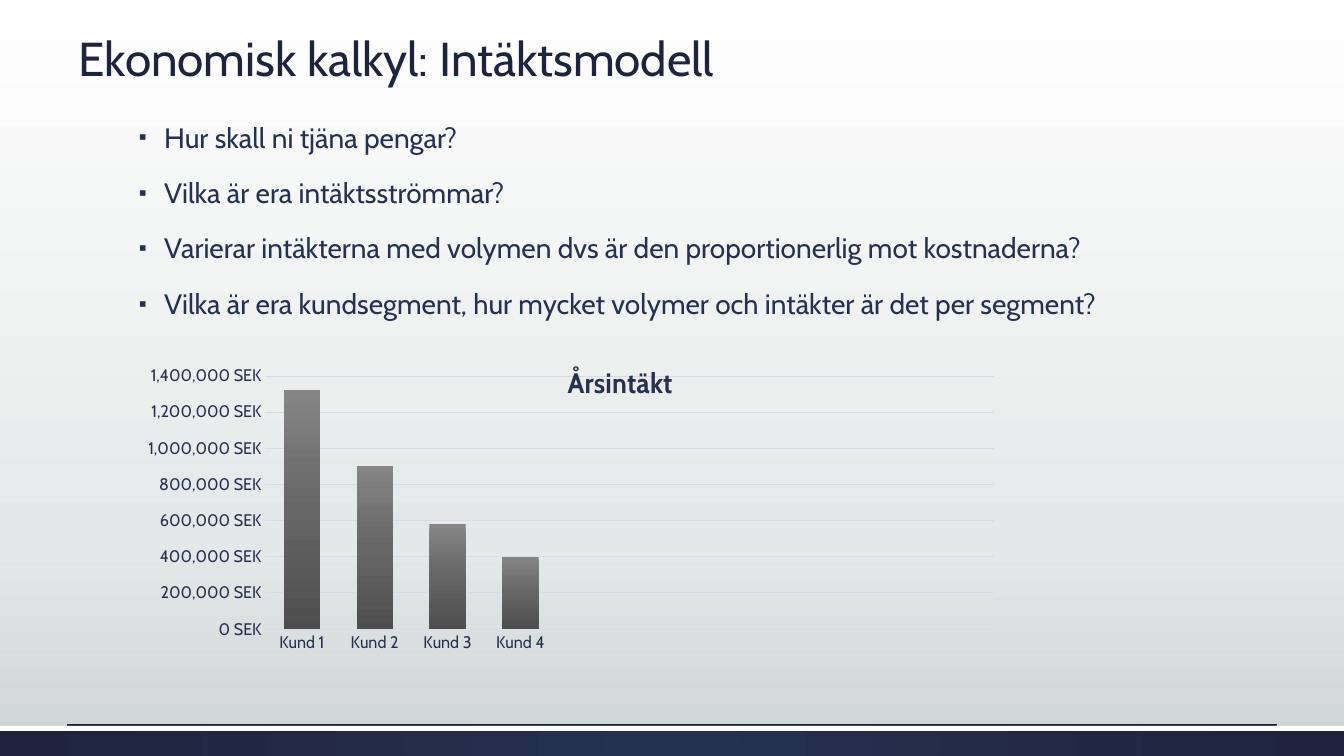
"""Build the revenue model slide with its questions and yearly revenue chart."""
from lxml import etree
from pptx import Presentation
from pptx import util as u
from pptx.chart.data import CategoryChartData
from pptx.dml.color import RGBColor
from pptx.enum import chart as ch, shapes as sh, text as tx
from pptx.oxml.ns import qn

TITLE = "Ekonomisk kalkyl: Intäktsmodell"
ASKS = [
    "Hur skall ni tjäna pengar?",
    "Vilka är era intäktsströmmar?",
    "Varierar intäkterna med volymen dvs är den proportionerlig mot kostnaderna?",
    "Vilka är era kundsegment, hur mycket volymer och intäkter är det per segment?",
]
HEAD = "Årsintäkt"
SALES = {"Kund 1": 1320000, "Kund 2": 900000, "Kund 3": 580000, "Kund 4": 400000}
SLOTS = 10
HUES = {"ink": "263050", "dark": "1D243C", "grid": "D7DCEC", "white": "FFFFFF"}
FACE = "Cabin"
BACK = [(0, "FFFFFF"), (72, "E5E8E8"), (100, "CDD2D2")]
BAND = [(0, HUES["ink"]), (100, HUES["dark"])]
BARS = [(0, "858585"), (50, "666666"), (100, "4E4E4E")]
WIDE, HIGH = 13.33, 7.5
FOOT = 0.96 * HIGH
EDGE = WIDE / 20
PLOT = {"layoutTarget": "inner", "xMode": "edge", "yMode": "edge",
        "x": 0.103, "y": 0.092, "w": 0.882, "h": 0.795}
SPOT = {"xMode": "edge", "yMode": "edge", "x": 0.463, "y": 0.035}


def put(obj, **vals):
    for key, val in vals.items():
        setattr(obj, key, val)


def hue(name):
    return RGBColor.from_string(HUES[name])


def sub(node, tag, **vals):
    return etree.SubElement(node, qn(tag), {k: str(v) for k, v in vals.items()})


def style(font, size, name="ink", bold=False):
    put(font, name=FACE, size=u.Pt(size), bold=bold)
    font.color.rgb = hue(name)


def grade(fill, root, stops, round_=False):
    fill.gradient()
    node = next(root.iter(qn("a:gradFill")))
    for kid in list(node):
        node.remove(kid)
    rows = sub(node, "a:gsLst")
    for pos, tone in stops:
        sub(sub(rows, "a:gs", pos=pos * 1000), "a:srgbClr", val=tone)
    if round_:
        way = sub(node, "a:path", path="circle")
        sub(way, "a:fillToRect", **dict.fromkeys("ltrb", 50000))
    else:
        sub(node, "a:lin", ang=5400000, scaled=0)


def place(node, spot, rank):
    for old in node.findall(qn("c:layout")):
        node.remove(old)
    lay = etree.Element(qn("c:layout"))
    man = sub(lay, "c:manualLayout")
    for key, val in spot.items():
        sub(man, "c:" + key, val=val)
    node.insert(rank, lay)


def band(slide, top, high):
    box = slide.shapes.add_shape(sh.MSO_SHAPE.RECTANGLE, 0, u.Inches(top),
                                 u.Inches(WIDE), u.Inches(high))
    box.shadow.inherit = False
    box.line.fill.background()
    return box


def write(slide, area, lines, size, name, anchor):
    frame = slide.shapes.add_textbox(*map(u.Inches, area)).text_frame
    put(frame, word_wrap=True, vertical_anchor=anchor, text="\n".join(lines))
    for par in frame.paragraphs:
        par.line_spacing = 0.9
        style(par.runs[0].font, size, name)
    return frame.paragraphs


def dot(par):
    par.space_before = u.Pt(18)
    props = par.runs[0].font and par._p.get_or_add_pPr()
    put_in = {"marL": u.Inches(0.3), "indent": u.Inches(-0.25)}
    for key, val in put_in.items():
        props.set(key, str(val))
    sub(sub(props, "a:buClr"), "a:srgbClr", val=HUES["ink"])
    sub(props, "a:buSzPct", val=80000)
    sub(props, "a:buFont", typeface="Arial")
    sub(props, "a:buChar", char="▪")


def graph(slide, area):
    data = CategoryChartData()
    gap = SLOTS - len(SALES)
    data.categories = [*SALES, *[""] * gap]
    data.add_series(HEAD, [*SALES.values(), *[None] * gap])
    chart = slide.shapes.add_chart(ch.XL_CHART_TYPE.COLUMN_CLUSTERED,
                                   *map(u.Inches, area), data).chart
    put(chart, has_legend=False, has_title=True)
    style(chart.font, 12)
    frame = chart.chart_title.text_frame
    frame.text = HEAD
    style(frame.paragraphs[0].runs[0].font, 20, bold=True)
    plot = chart.plots[0]
    put(plot, gap_width=100, overlap=-24, vary_by_categories=False)
    grade(plot.series[0].format.fill, chart.element, BARS)
    cat, val = chart.category_axis, chart.value_axis
    for axis in (cat, val):
        put(axis, major_tick_mark=ch.XL_TICK_MARK.NONE,
            minor_tick_mark=ch.XL_TICK_MARK.NONE)
        style(axis.tick_labels.font, 12)
    put(val, minimum_scale=0, maximum_scale=1400000, major_unit=200000,
        has_major_gridlines=True)
    put(val.tick_labels, number_format="#,##0\\ [$SEK]",
        number_format_is_linked=False)
    val.format.line.fill.background()
    for line in (cat.format.line, val.major_gridlines.format.line):
        line.color.rgb = hue("grid")
        line.width = u.Pt(0.75)
    place(next(chart.element.iter(qn("c:plotArea"))), PLOT, 0)
    place(next(chart.element.iter(qn("c:title"))), SPOT, 1)


def main():
    deck = Presentation()
    put(deck, slide_width=u.Inches(WIDE), slide_height=u.Inches(HIGH))
    slide = deck.slides.add_slide(deck.slide_layouts[6])
    grade(slide.background.fill, slide.element, BACK)
    base = band(slide, FOOT, HIGH - FOOT)
    grade(base.fill, base.element, BAND, True)
    strip = band(slide, FOOT, 0.05)
    strip.fill.solid()
    strip.fill.fore_color.rgb = hue("white")
    ends = (EDGE, FOOT - 0.01, WIDE - EDGE, FOOT - 0.01)
    rule = slide.shapes.add_connector(sh.MSO_CONNECTOR.STRAIGHT,
                                      *map(u.Inches, ends))
    rule.line.color.rgb = hue("dark")
    rule.line.width = u.Pt(0.75)
    sub(rule.element.spPr, "a:effectLst")
    write(slide, (0.68, 0.27, 10.4, 0.64), [TITLE], 34, "dark",
          tx.MSO_ANCHOR.BOTTOM)
    graph(slide, (1.47, 3.44, 8.51, 3.16))
    for par in write(slide, (1.23, 1.18, 10.4, 4.51), ASKS, 20, "ink",
                     tx.MSO_ANCHOR.TOP):
        dot(par)
    deck.save("out.pptx")


if __name__ == "__main__":
    main()
